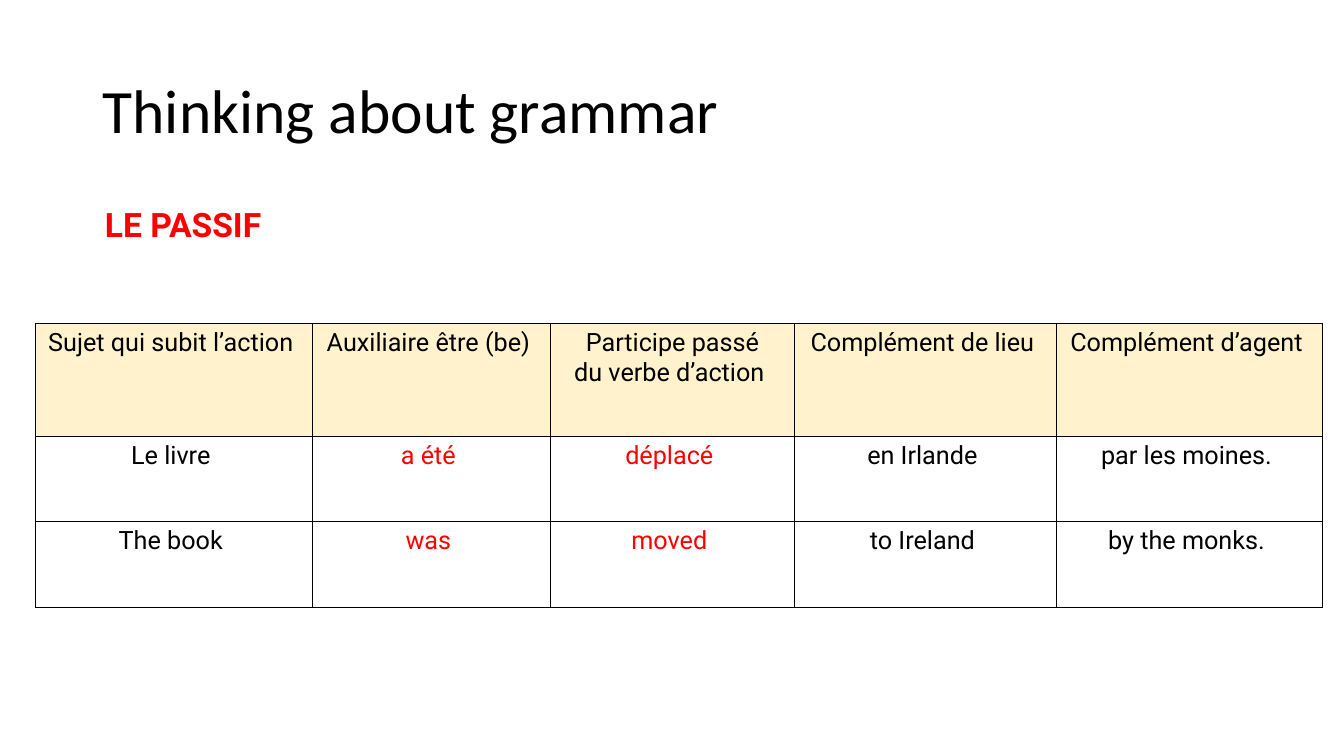
from pptx import Presentation
from pptx.dml.color import RGBColor
from pptx.enum.text import MSO_ANCHOR as Anchor, PP_ALIGN as Align
from pptx.oxml import parse_xml
from pptx.oxml.ns import nsdecls
from pptx.util import Inches, Pt

COLORS = {"ink": "000000", "accent": "FF0000", "header": "FFF2CC", "paper": "FFFFFF"}
TITLE = "Thinking about grammar"
TOPIC = "LE PASSIF"
GRAMMAR = [
    ["Sujet qui subit l’action", "Auxiliaire être (be)",
     "Participe passé\ndu verbe d’action", "Complément\nde lieu", "Complément d’agent"],
    ["Le livre", "a été", "déplacé", "en Irlande", "par les\nmoines."],
    ["The book", "was", "moved", "to Ireland", "by the monks."],
]
VERB_COLUMNS = (1, 2)
COLUMN_WIDTHS = [2.75, 2.36, 2.42, 2.6, 2.64]
ROW_HEIGHTS = [1.12, 0.84, 0.86]
TABLE_LEFT, TABLE_TOP = 0.35, 3.21
BORDER_WIDTH = Pt(0.5)
NO_BREAK = chr(160)


def style(paragraph, font_name, size, color, bold=False):
    font = paragraph.font
    font.name, font.size, font.bold = font_name, Pt(size), bold
    font.color.rgb = RGBColor.from_string(COLORS[color])


def add_text(slide, text, place, anchor, inset):
    frame = slide.shapes.add_textbox(*map(Inches, place)).text_frame
    frame.word_wrap = True
    frame.vertical_anchor = anchor
    frame.margin_left = frame.margin_right = Inches(inset)
    frame.margin_top = frame.margin_bottom = Inches(inset / 2)
    frame.text = text
    return frame.paragraphs[0]


def add_borders(cell):
    properties = cell._tc.get_or_add_tcPr()
    for position, side in enumerate(("lnL", "lnR", "lnT", "lnB")):
        properties.insert(position, parse_xml(
            f'<a:{side} {nsdecls("a")} w="{BORDER_WIDTH}"><a:solidFill>'
            f'<a:srgbClr val="{COLORS["ink"]}"/></a:solidFill></a:{side}>'))


def add_grammar_table(slide):
    table = slide.shapes.add_table(
        len(GRAMMAR), len(COLUMN_WIDTHS), Inches(TABLE_LEFT), Inches(TABLE_TOP),
        Inches(sum(COLUMN_WIDTHS)), Inches(sum(ROW_HEIGHTS))).table
    for column, width in zip(table.columns, COLUMN_WIDTHS):
        column.width = Inches(width)
    for row, height in zip(table.rows, ROW_HEIGHTS):
        row.height = Inches(height)
    for r, phrases in enumerate(GRAMMAR):
        for c, phrase in enumerate(phrases):
            cell = table.cell(r, c)
            cell.text = phrase.replace(" ", NO_BREAK).replace("\n", " ") + NO_BREAK
            cell.fill.solid()
            cell.fill.fore_color.rgb = RGBColor.from_string(
                COLORS["paper" if r else "header"])
            paragraph = cell.text_frame.paragraphs[0]
            paragraph.alignment = Align.CENTER
            style(paragraph, "Roboto", 18, "accent" if r and c in VERB_COLUMNS else "ink")
            add_borders(cell)


def main():
    deck = Presentation()
    deck.slide_width, deck.slide_height = Inches(13.33), Inches(7.5)
    slide = deck.slides.add_slide(deck.slide_layouts[6])
    title = add_text(slide, TITLE, (0.92, 0.4, 11.5, 1.45), Anchor.MIDDLE, 0.1)
    title.line_spacing = 0.9
    style(title, "Calibri", 44, "ink")
    add_grammar_table(slide)
    topic = add_text(slide, TOPIC, (1.04, 2.02, 5.13, 0.94), Anchor.TOP, 0)
    style(topic, "Roboto", 24, "accent", bold=True)
    deck.save("out.pptx")


if __name__ == "__main__":
    main()
